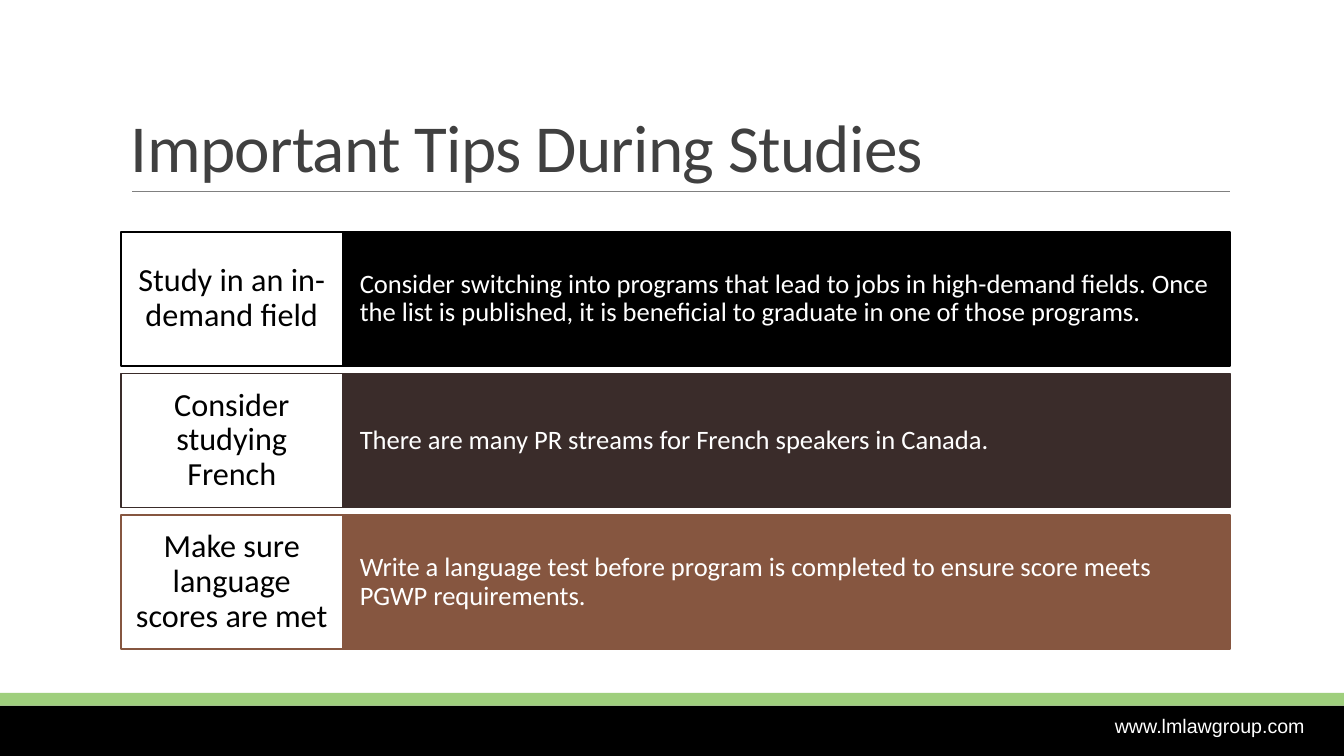
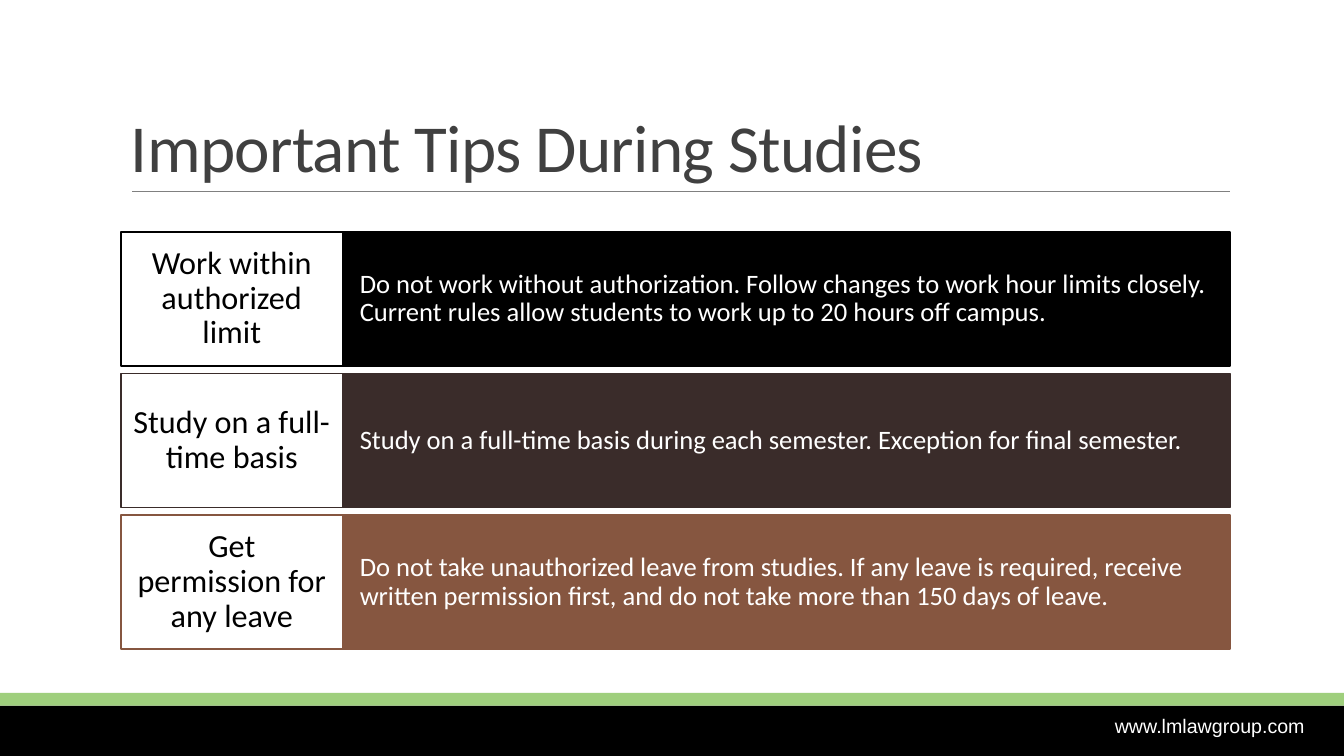
from dataclasses import dataclass

from lxml.etree import SubElement
from pptx import Presentation
from pptx.dml.color import RGBColor as RGB
from pptx.enum.shapes import MSO_CONNECTOR as Connector, MSO_SHAPE as Shape
from pptx.enum.text import MSO_ANCHOR as Anchor, PP_ALIGN as Align
from pptx.oxml.ns import qn
from pptx.util import Cm, Pt


@dataclass(frozen=True)
class Theme:
    black: RGB = RGB(0x00, 0x00, 0x00)
    white: RGB = RGB(0xFF, 0xFF, 0xFF)
    green: RGB = RGB(0x9F, 0xCF, 0x7D)
    title: RGB = RGB(0x40, 0x40, 0x40)
    rule: RGB = RGB(0x80, 0x80, 0x80)
    rows: tuple = (RGB(0x00, 0x00, 0x00), RGB(0x3A, 0x2C, 0x2A), RGB(0x86, 0x56, 0x40))
    font: str = "Calibri"
    footer_font: str = "Arial"
    title_size: int = 48
    label_size: int = 23
    advice_size: int = 19
    footer_size: int = 14
    border: float = 1.25


@dataclass(frozen=True)
class Box:
    """A region of the slide, in centimetres."""
    left: float
    top: float
    width: float
    height: float

    @property
    def lengths(self):
        return tuple(Cm(n) for n in (self.left, self.top, self.width, self.height))


THEME = Theme()
SLIDE = Box(0, 0, 33.87, 19.05)
TITLE = Box(3.05, 0.8, 27.94, 4.03)
TIPS = Box(3.05, 5.84, 27.94, 10.52)
FOOTER = Box(0, 17.46, SLIDE.width, 1.59)

DECK = [
    ("Important Tips During Studies", [
        ("Study in an in-demand field",
         "Consider switching into programs that lead to jobs in high-demand fields. "
         "Once the list is published, it is beneficial to graduate in one of those programs."),
        ("Consider studying French",
         "There are many PR streams for French speakers in Canada."),
        ("Make sure language scores are met",
         "Write a language test before program is completed to ensure score meets "
         "PGWP requirements."),
    ]),
    ("Important Tips During Studies", [
        ("Work within authorized limit",
         "Do not work without authorization. Follow changes to work hour limits closely. "
         "Current rules allow students to work up to 20 hours off campus."),
        ("Study on a full-time basis",
         "Study on a full-time basis during each semester. Exception for final semester."),
        ("Get permission for any leave",
         "Do not take unauthorized leave from studies. If any leave is required, receive "
         "written permission first, and do not take more than 150 days of leave."),
    ]),
]


def write(holder, text, size, color, font=THEME.font, align=Align.LEFT,
          anchor=Anchor.MIDDLE, insets=(0.25, 0.13), spacing=0.9):
    """Fill a shape with one run of text; insets are (sides, top and bottom) in cm."""
    frame = holder.text_frame
    frame.word_wrap = True
    frame.vertical_anchor = anchor
    frame.margin_left = frame.margin_right = Cm(insets[0])
    frame.margin_top = frame.margin_bottom = Cm(insets[1])
    paragraph = frame.paragraphs[0]
    paragraph.alignment = align
    paragraph.line_spacing = spacing
    run = paragraph.add_run()
    run.text = text
    run.font.name = font
    run.font.size = Pt(size)
    run.font.color.rgb = color
    return run


def add_panel(slide, box, fill, border=None):
    panel = slide.shapes.add_shape(Shape.RECTANGLE, *box.lengths)
    panel.shadow.inherit = False
    panel.fill.solid()
    panel.fill.fore_color.rgb = fill
    if border is None:
        panel.line.fill.background()
    else:
        panel.line.color.rgb = border
        panel.line.width = Pt(THEME.border)
    return panel


def add_footer(slide, box):
    stripe = 0.32
    add_panel(slide, Box(box.left, box.top + stripe, box.width, box.height - stripe), THEME.black)
    add_panel(slide, Box(box.left, box.top, box.width, stripe), THEME.green)
    address_box = Box(box.left + box.width - 6.11, box.top + 0.4, 5.46, 0.86)
    address = slide.shapes.add_textbox(*address_box.lengths)
    write(address, "www.lmlawgroup.com", THEME.footer_size, THEME.white,
          THEME.footer_font, Align.CENTER, Anchor.TOP, spacing=1.0)


def add_title(slide, box, text):
    """Title resting on a thin rule along the bottom of its box."""
    right, bottom = Cm(box.left + box.width), Cm(box.top + box.height)
    rule = slide.shapes.add_connector(
        Connector.STRAIGHT, Cm(box.left + 0.28), bottom, right, bottom)
    rule.line.color.rgb = THEME.rule
    rule.line.width = Pt(0.5)
    SubElement(rule._element.spPr, qn("a:effectLst"))
    heading = slide.shapes.add_textbox(*box.lengths)
    run = write(heading, text, THEME.title_size, THEME.title,
                anchor=Anchor.BOTTOM, spacing=0.85)
    run.font._element.set("spc", "-50")


def add_tip(slide, box, label, advice, color):
    label_width = box.width / 5
    advice_box = Box(box.left + label_width, box.top, box.width - label_width, box.height)
    write(add_panel(slide, advice_box, color, color), advice,
          THEME.advice_size, THEME.white, insets=(0.43, 0.86))
    label_box = Box(box.left, box.top, label_width, box.height)
    write(add_panel(slide, label_box, THEME.white, color), label,
          THEME.label_size, THEME.black, align=Align.CENTER, insets=(0.3, 0.33))


def add_tips(slide, box, tips):
    """Stack the tips as rows of equal height."""
    gap = 0.19
    height = (box.height - gap * (len(tips) - 1)) / len(tips)
    for row, ((label, advice), color) in enumerate(zip(tips, THEME.rows)):
        row_box = Box(box.left, box.top + row * (height + gap), box.width, height)
        add_tip(slide, row_box, label, advice, color)


def main():
    deck = Presentation()
    deck.slide_width, deck.slide_height = Cm(SLIDE.width), Cm(SLIDE.height)
    blank = deck.slide_layouts[6]
    for title, tips in DECK:
        slide = deck.slides.add_slide(blank)
        add_footer(slide, FOOTER)
        add_title(slide, TITLE, title)
        add_tips(slide, TIPS, tips)
    deck.save("out.pptx")


if __name__ == "__main__":
    main()
